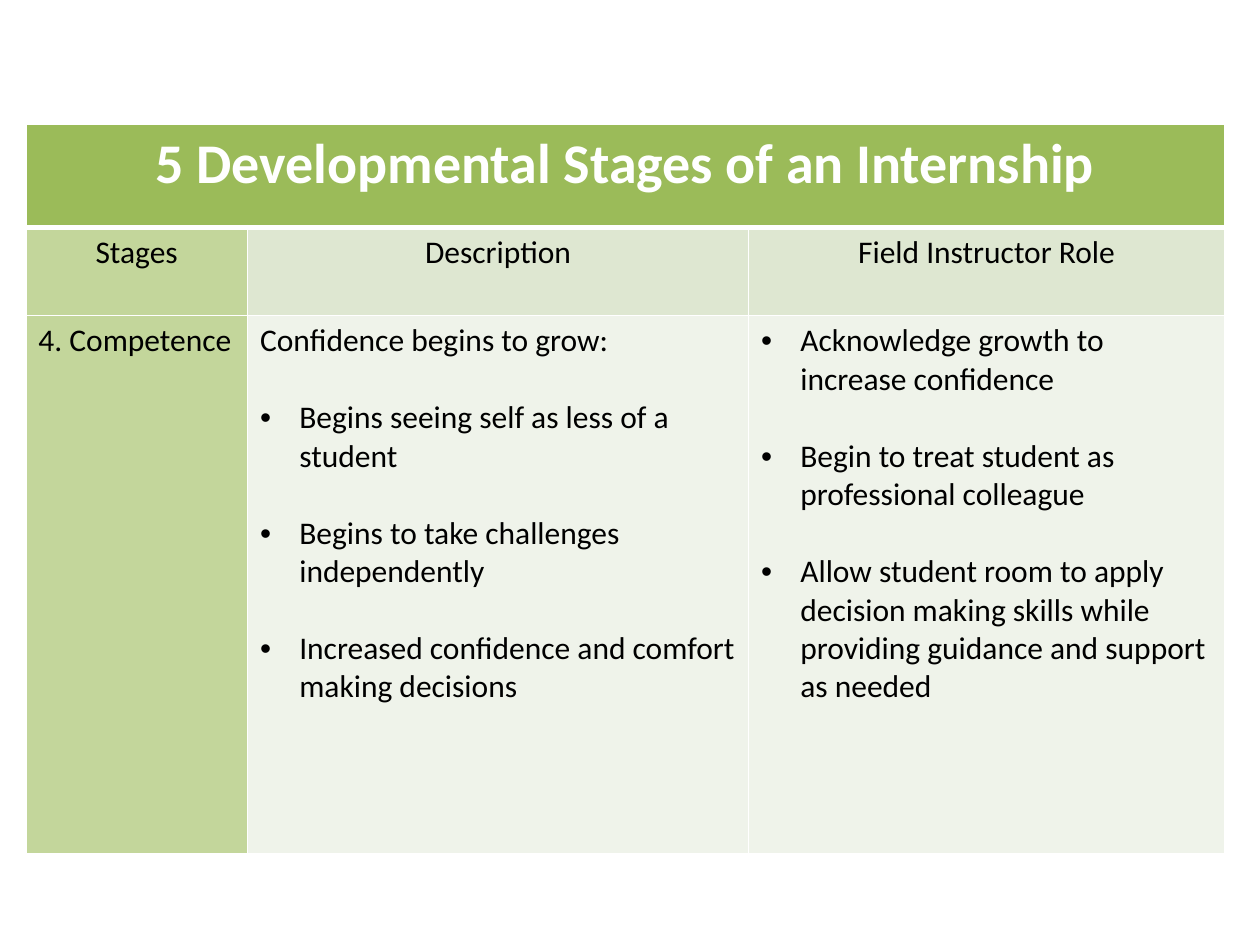
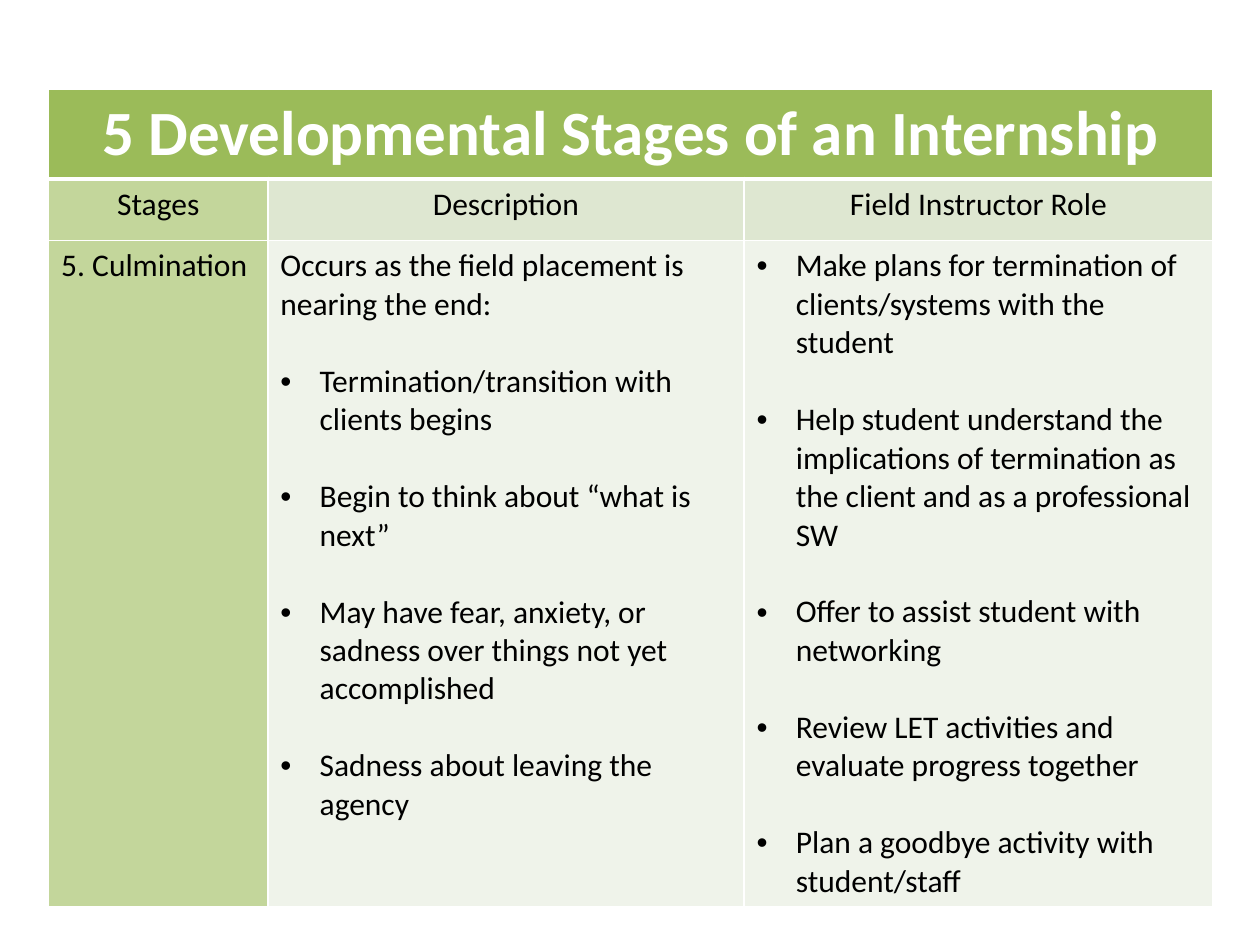
from lxml.etree import SubElement as Sub
from pptx import Presentation
from pptx.dml.color import RGBColor
from pptx.enum.text import PP_ALIGN as Align
from pptx.oxml.ns import qn
from pptx.util import Cm, Pt

FONT = "Calibri"
WHITE, BLACK = "FFFFFF", "000000"
GREEN, STAGE, HEAD, BODY = "9BBB59", "C3D69B", "DEE7D1", "EFF3EA"
TITLE = "5 Developmental Stages of an Internship"
HEADS = ["Stages", "Description", "Field Instructor Role"]
INDENT = Cm(0.79)
GAP = Pt(22)


def rgb(code):
    """Turn a hex string into a colour."""
    return RGBColor.from_string(code)


def paint(cell, fill, top=1, bottom=1):
    """Give a cell its white borders and its fill."""
    props = cell._tc.get_or_add_tcPr()
    for side, width in zip("LRTB", (1, 1, top, bottom)):
        line = Sub(props, qn("a:ln" + side), w=str(Pt(width)))
        solid = Sub(line, qn("a:solidFill"))
        Sub(solid, qn("a:srgbClr"), val=WHITE)
    cell.fill.solid()
    cell.fill.fore_color.rgb = rgb(fill)


def style(para, size=18, color=BLACK, bold=False, align=Align.LEFT):
    """Set the font and alignment of a paragraph."""
    para.alignment = align
    font = para.font
    font.name, font.size, font.bold = FONT, Pt(size), bold
    font.color.rgb = rgb(color)


def bullet(para):
    """Give a paragraph a round bullet and a hanging indent."""
    props = para._p.get_or_add_pPr()
    props.set("marL", str(INDENT))
    props.set("indent", str(-INDENT))
    Sub(props, qn("a:buFont"), typeface="Arial")
    Sub(props, qn("a:buChar"), char="•")


def write(cell, points, intro=None):
    """Fill a cell with an optional opening line and spaced bullets."""
    frame = cell.text_frame
    lines = ([intro] if intro else []) + points
    for i, text in enumerate(lines):
        para = frame.add_paragraph() if i else frame.paragraphs[0]
        para.text = text
        if i:
            para.space_before = GAP
        if text != intro:
            bullet(para)
        style(para)


def stage(deck, box, size, name, intro, signs, roles):
    """Add a slide whose table describes one stage of an internship."""
    left, top, cols, rows = box
    slide = deck.slides.add_slide(deck.slide_layouts[6])
    table = slide.shapes.add_table(
        len(rows), len(cols), Cm(left), Cm(top), Cm(sum(cols)), Cm(sum(rows))
    ).table
    table.first_row = table.horz_banding = False
    for col, width in zip(table.columns, cols):
        col.width = Cm(width)
    for row, height in zip(table.rows, rows):
        row.height = Cm(height)

    for i, head in enumerate(HEADS):
        paint(table.cell(0, i), GREEN, bottom=3)
        paint(table.cell(1, i), HEAD if i else STAGE, top=3)
        paint(table.cell(2, i), BODY if i else STAGE)
        para = table.cell(1, i).text_frame.paragraphs[0]
        para.text = head
        style(para, align=Align.CENTER)

    table.cell(0, 0).merge(table.cell(0, 2))
    para = table.cell(0, 0).text_frame.paragraphs[0]
    para.text = TITLE
    style(para, size, WHITE, True, Align.CENTER)
    write(table.cell(2, 0), [], name)
    write(table.cell(2, 1), signs, intro)
    write(table.cell(2, 2), roles)


def main():
    """Build the deck."""
    deck = Presentation()
    deck.slide_width, deck.slide_height = Cm(25.4), Cm(19.05)
    stage(
        deck, (0.52, 2.5, (4.47, 10.1, 9.6), (2.08, 1.78, 10.85)), 32,
        "4. Competence",
        "Confidence begins to grow:",
        ["Begins seeing self as less of a student",
         "Begins to take challenges independently",
         "Increased confidence and comfort making decisions"],
        ["Acknowledge growth to increase confidence",
         "Begin to treat student as professional colleague",
         "Allow student room to apply decision making skills while "
         "providing guidance and support as needed"],
    )
    stage(
        deck, (0.98, 1.8, (4.42, 9.6, 9.45), (1.78, 1.24, 13.4)), 36,
        "5. Culmination",
        "Occurs as the field placement is nearing the end:",
        ["Termination/transition with clients begins",
         "Begin to think about “what is next”",
         "May have fear, anxiety, or sadness over things not yet accomplished",
         "Sadness about leaving the agency"],
        ["Make plans for termination of clients/systems with the student",
         "Help student understand the implications of termination as "
         "the client and as a professional SW",
         "Offer to assist student with networking",
         "Review LET activities and evaluate progress together",
         "Plan a goodbye activity with student/staff"],
    )
    deck.save("out.pptx")


if __name__ == "__main__":
    main()
